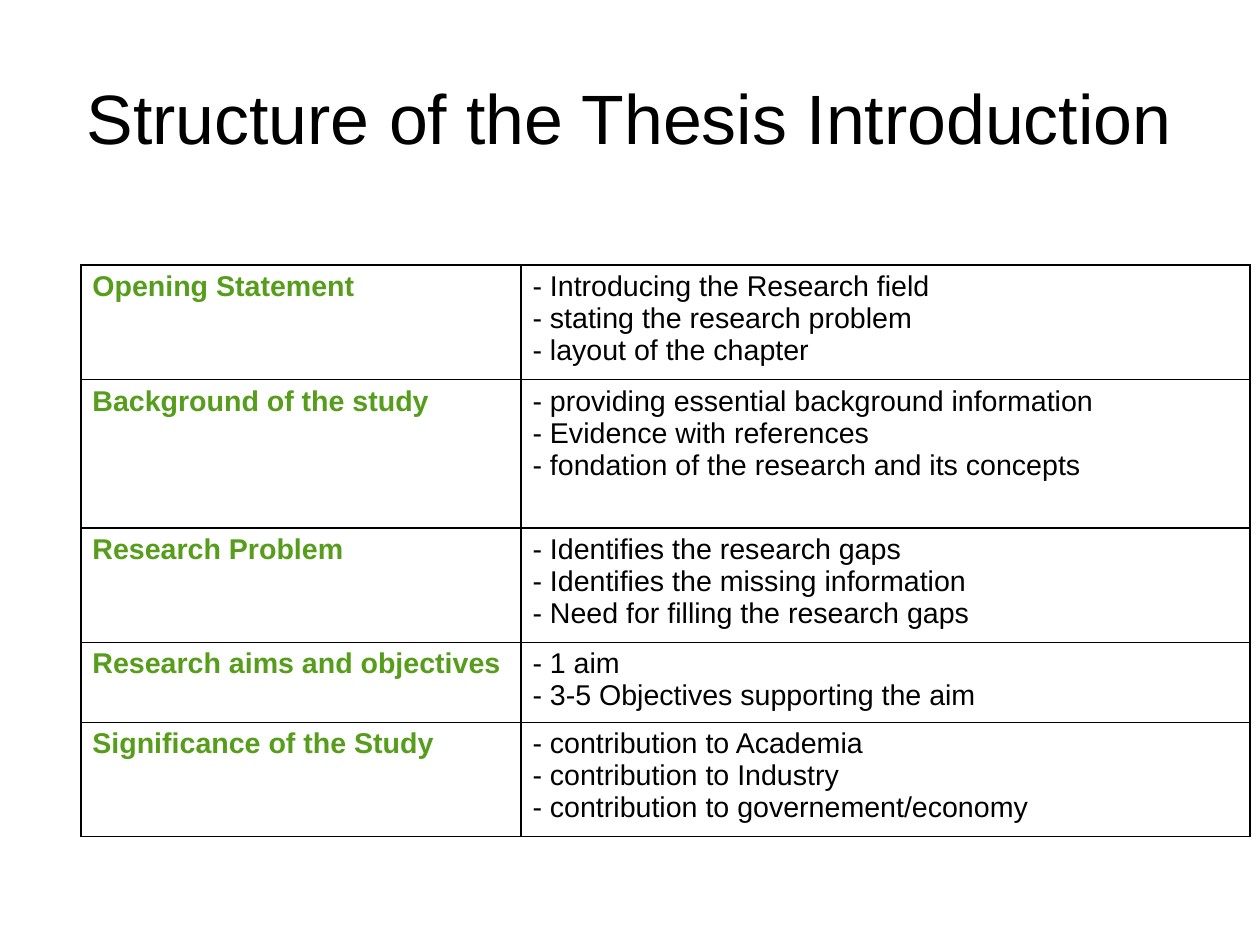
from lxml.etree import SubElement
from pptx import Presentation
from pptx.dml.color import RGBColor
from pptx.enum.text import MSO_ANCHOR, PP_ALIGN
from pptx.oxml.ns import qn
from pptx.util import Cm, Pt

BLACK, GREEN = "000000", "579D1C"

# Section, its points and row height in cm
SECTIONS = [
    ("Opening Statement",
     ["- Introducing the Research field",
      "- stating the research problem",
      "- layout of the chapter"], 2.54),
    ("Background of the study",
     ["- providing essential background information",
      "- Evidence with references",
      "- fondation of the research and its concepts"], 3.3),
    ("Research Problem",
     ["- Identifies the research gaps",
      "- Identifies the missing information",
      "- Need for filling the research gaps"], 2.54),
    ("Research aims and objectives",
     ["- 1 aim",
      "- 3-5 Objectives supporting the aim"], 1.78),
    ("Significance of the Study",
     ["- contribution to Academia",
      "- contribution to Industry",
      "- contribution to governement/economy"], 2.54),
]
COLUMN_WIDTHS = [9.78, 16.2]


def color(value):
    return RGBColor.from_string(value)


class ThesisSlide:
    font_name = "Arial"

    def __init__(self, presentation):
        self.slide = presentation.slides.add_slide(presentation.slide_layouts[6])

    def set_text(self, frame, lines, size, ink, bold=False, align=PP_ALIGN.LEFT):
        frame.text = "\n".join(lines)
        for paragraph in frame.paragraphs:
            paragraph.alignment = align
            font = paragraph.font
            font.name, font.size, font.bold = self.font_name, Pt(size), bold
            font.color.rgb = color(ink)

    def title(self, text, left, top, width, height):
        heading = self.slide.shapes.add_textbox(Cm(left), Cm(top), Cm(width), Cm(height))
        frame = heading.text_frame
        frame.word_wrap = True
        frame.vertical_anchor = MSO_ANCHOR.MIDDLE
        frame.margin_left = frame.margin_right = 0
        frame.margin_top = frame.margin_bottom = 0
        self.set_text(frame, [text], 44, BLACK, align=PP_ALIGN.CENTER)

    def cell(self, cell, lines, ink, bold):
        self.set_text(cell.text_frame, lines, 18, ink, bold)
        # Borders come before the fill in the cell properties
        properties = cell._tc.get_or_add_tcPr()
        for side in ("lnL", "lnR", "lnT", "lnB"):
            border = SubElement(properties, qn(f"a:{side}"), w=str(Pt(1)))
            fill = SubElement(border, qn("a:solidFill"))
            SubElement(fill, qn("a:srgbClr"), val=BLACK)
        cell.fill.background()

    def section_table(self, sections, left, top, widths):
        height = sum(row_height for _, _, row_height in sections)
        table = self.slide.shapes.add_table(
            len(sections), len(widths), Cm(left), Cm(top),
            Cm(sum(widths)), Cm(height)).table
        table.first_row = table.horz_banding = False
        for column, width in zip(table.columns, widths):
            column.width = Cm(width)
        for index, (section, points, row_height) in enumerate(sections):
            table.rows[index].height = Cm(row_height)
            self.cell(table.cell(index, 0), [section], GREEN, True)
            self.cell(table.cell(index, 1), points, BLACK, False)


def main():
    presentation = Presentation()
    presentation.slide_width, presentation.slide_height = Cm(28), Cm(21)
    thesis = ThesisSlide(presentation)

    # Heading
    thesis.title("Structure of the Thesis Introduction", 1.4, 0.84, 25.2, 3.51)

    # Parts of the introduction
    thesis.section_table(SECTIONS, 1.8, 5.89, COLUMN_WIDTHS)

    presentation.save("out.pptx")


if __name__ == "__main__":
    main()
